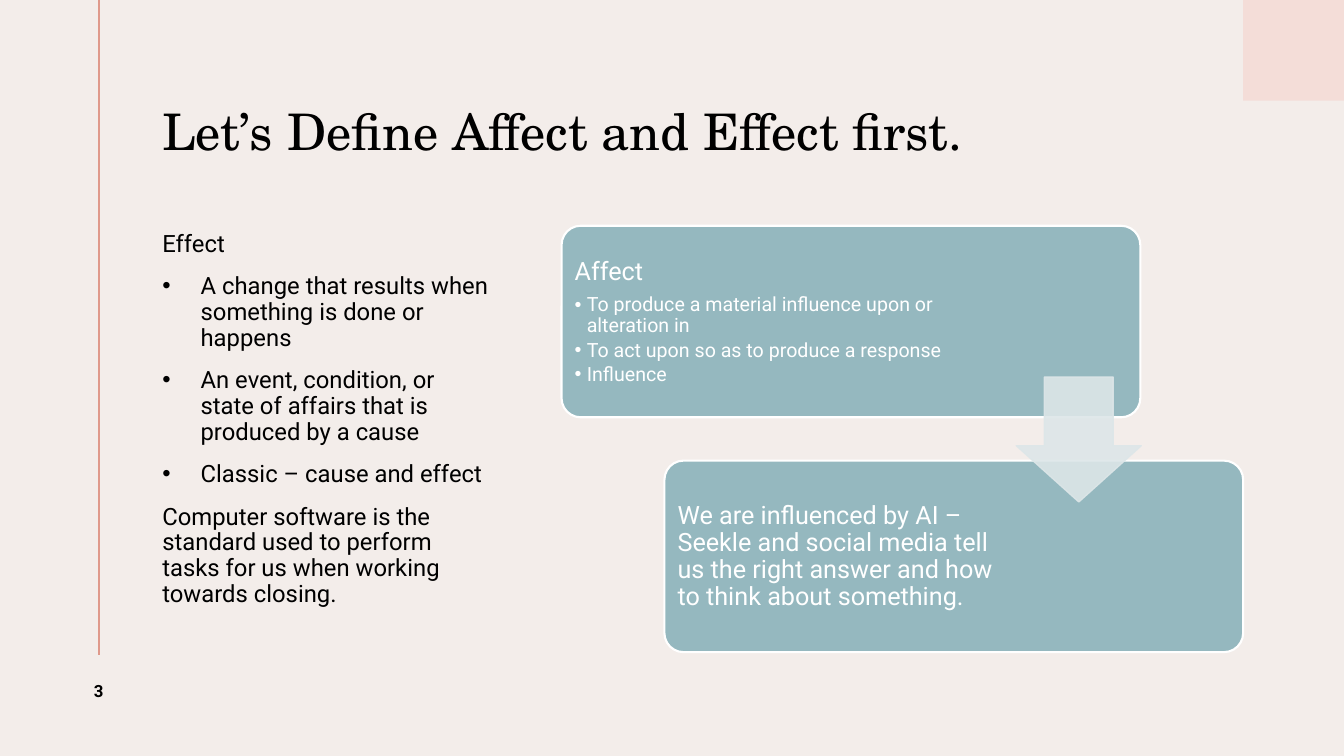
from lxml.etree import SubElement
from pptx import Presentation
from pptx.dml.color import RGBColor
from pptx.enum.shapes import MSO_CONNECTOR as Connector, MSO_SHAPE as Shape
from pptx.enum.text import MSO_ANCHOR as Anchor, PP_ALIGN as Align
from pptx.oxml.ns import qn
from pptx.util import Inches, Pt

CREAM = RGBColor(0xF3, 0xED, 0xEA)
BLUSH = RGBColor(0xF4, 0xDD, 0xD8)
CORAL = RGBColor(0xDF, 0x99, 0x8B)
TEAL = RGBColor(0x95, 0xB8, 0xBF)
MIST = RGBColor(0xDD, 0xE6, 0xE8)
WHITE = RGBColor(0xFF, 0xFF, 0xFF)
BLACK = RGBColor(0x00, 0x00, 0x00)


def add_text(place, insets, anchor, lines, color, font="Roboto"):
    """Each line is (text, size, space after, bullet indent or 0)."""
    box = page.shapes.add_textbox(*map(Inches, place))
    frame = box.text_frame
    frame.word_wrap = True
    frame.vertical_anchor = anchor
    (frame.margin_left, frame.margin_top,
     frame.margin_right, frame.margin_bottom) = map(Inches, insets)
    for index, (text, size, after, indent) in enumerate(lines):
        para = frame.add_paragraph() if index else frame.paragraphs[0]
        para.text = text
        para.line_spacing = 0.9
        para.space_after = Pt(after)
        para.font.size = Pt(size)
        span = para.runs[0]
        span.font.size = Pt(size)
        span.font.name = font
        span.font.color.rgb = color
        if indent:
            props = para._p.get_or_add_pPr()
            props.set("marL", str(Inches(indent)))
            props.set("indent", str(-Inches(indent)))
            bullet_font = SubElement(props, qn("a:buFont"))
            bullet_font.set("typeface", "Arial")
            SubElement(props, qn("a:buChar")).set("char", "•")
            # The default run properties come last in the paragraph properties
            props.append(props.find(qn("a:defRPr")))
    return frame


def add_block(kind, place, fill, line, width):
    block = page.shapes.add_shape(kind, *map(Inches, place))
    block.shadow.inherit = False
    block.fill.solid()
    block.fill.fore_color.rgb = fill
    if line is None:
        block.line.fill.background()
    else:
        block.line.color.rgb = line
        block.line.width = Pt(width)
    return block


deck = Presentation()
deck.slide_width, deck.slide_height = Inches(13.33), Inches(7.5)
page = deck.slides.add_slide(deck.slide_layouts[6])
page.background.fill.solid()
page.background.fill.fore_color.rgb = CREAM

# Corner square and vertical rule
add_block(Shape.RECTANGLE, (12.33, 0, 1, 1), BLUSH, None, 0)
rule = page.shapes.add_connector(
    Connector.STRAIGHT, Inches(0.98), 0, Inches(0.98), Inches(6.5))
rule.line.color.rgb = CORAL
rule.line.width = Pt(1.5)
SubElement(rule._element.spPr, qn("a:effectLst"))

# Title, definition of effect, page number
BODY_INSETS = (0, 0.05, 0.1, 0.05)
add_text((1.61, 0.55, 10.73, 1.56), BODY_INSETS, Anchor.MIDDLE,
         [("Let’s Define Affect and Effect first.", 36, 0, 0)],
         BLACK, "TeX Gyre Schola")
add_text((1.61, 2.25, 3.38, 4.23), BODY_INSETS, Anchor.TOP, [
    ("Effect", 17, 12, 0),
    ("A change that results when something is done or happens", 17, 12, 0.38),
    ("An event, condition, or state of affairs that is produced by a cause",
     17, 12, 0.38),
    ("Classic – cause and effect", 17, 12, 0.38),
    ("Computer software is the standard used to perform tasks for us "
     "when working towards closing.", 17, 12, 0),
], BLACK)
number = add_text((0.45, 6.5, 1.06, 0.71), (0.1, 0.05, 0.1, 0.05),
                  Anchor.MIDDLE, [("3", 12, 6, 0)], BLACK)
number.paragraphs[0].alignment = Align.CENTER
number.paragraphs[0].line_spacing = 1.0
number.paragraphs[0].runs[0].font.bold = True

# Two stepped cards
cards = [
    (5.57, 2.24, 3.78, [
        ("Affect", 18, 6.3, 0),
        ("To produce a material influence upon or alteration in", 14, 2.1, 0.12),
        ("To act upon so as to produce a response", 14, 2.1, 0.12),
        ("Influence", 14, 2.1, 0.12),
    ]),
    (6.59, 4.57, 3.38, [
        ("We are influenced by AI – Seekle and social media tell us the right "
         "answer and how to think about something.", 18, 6.3, 0),
    ]),
]
for left, top, text_width, lines in cards:
    card = add_block(Shape.ROUNDED_RECTANGLE, (left, top, 5.74, 1.9),
                     TEAL, WHITE, 1.5)
    card.adjustments[0] = 0.1
    add_text((left + 0.06, top + 0.06, text_width, 1.79), (0.07,) * 4,
             Anchor.MIDDLE, lines, WHITE)

# Translucent arrow between the cards
arrow = add_block(Shape.DOWN_ARROW, (10.08, 3.74, 1.24, 1.24), MIST, MIST, 1)
arrow.adjustments[0] = 0.45
arrow.adjustments[1] = 0.55
# Shaft width comes first, head length second
arrow.adjustments[0], arrow.adjustments[1] = 0.55, 0.45
for tint in arrow._element.spPr.iter(qn("a:srgbClr")):
    SubElement(tint, qn("a:alpha")).set("val", "90000")

deck.save("out.pptx")
